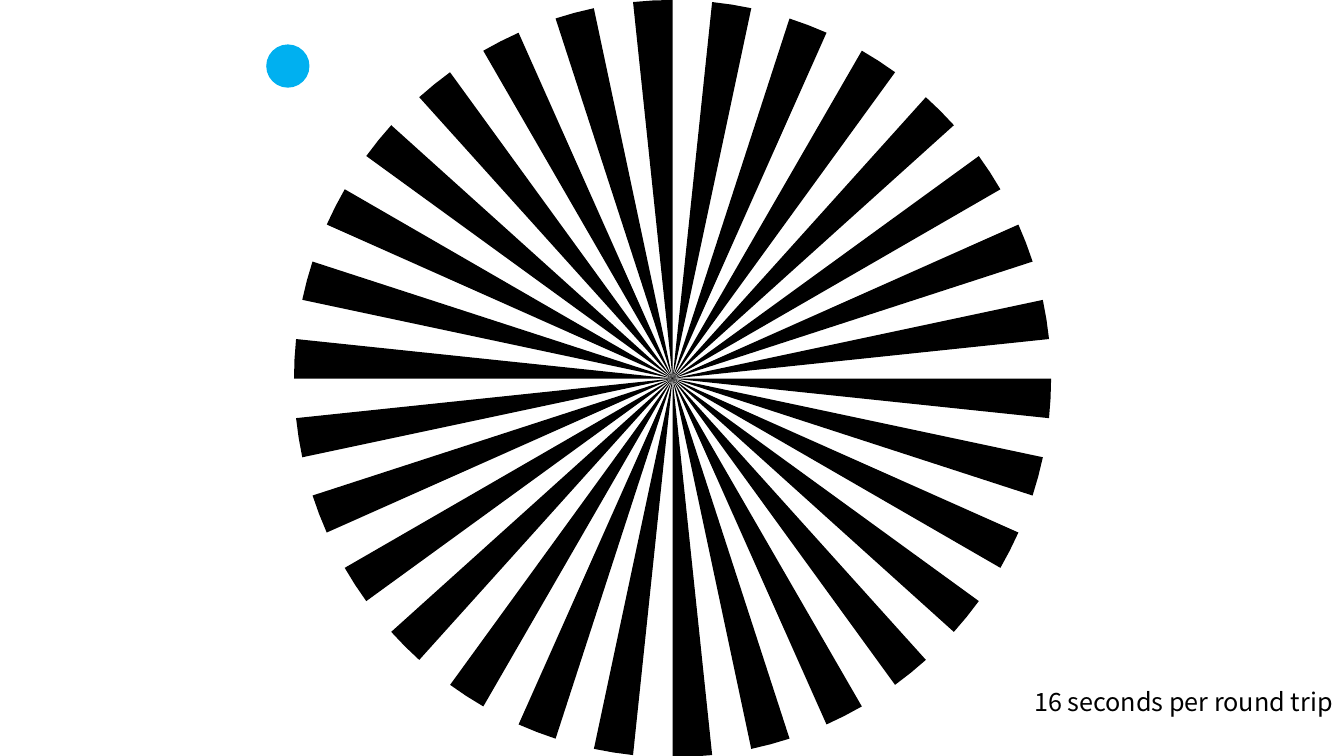
from math import cos, radians, sin

from pptx import Presentation
from pptx.dml.color import RGBColor
from pptx.enum import shapes, text
from pptx.util import Cm, Pt

# Content: lengths in cm, angles in degrees clockwise from the right
CAPTION = "16 seconds per round trip"
FONT, FONT_SIZE = "Noto Sans CJK JP", 18
CAPTION_BOX = (25.81, 17.17, 8.08, 1.02)
DOT_BOX = (6.71, 1.12, 1.09, 1.09)
BLACK, BLUE = "000000", "00B0F0"
CENTER = (16.95, 9.54)
RADIUS = 9.54
RAYS = 30
PITCH = 360 / RAYS
RAY_ANGLE = PITCH / 2


def paint(s, color):
    s.shadow.inherit = False
    s.fill.solid()
    s.fill.fore_color.rgb = RGBColor.from_string(color)
    s.line.fill.background()


def rim_point(angle):
    x, y = CENTER
    a = radians(angle)
    return Cm(x + RADIUS * cos(a)), Cm(y + RADIUS * sin(a))


prs = Presentation()
prs.slide_width, prs.slide_height = Cm(33.87), Cm(19.05)
slide = prs.slides.add_slide(prs.slide_layouts[6])

# Wheel of rays
wheel = slide.shapes.add_group_shape()
for i in range(RAYS):
    start = i * PITCH
    ray = wheel.shapes.build_freeform(Cm(CENTER[0]), Cm(CENTER[1]))
    ray.add_line_segments([rim_point(start + RAY_ANGLE * k / 2) for k in range(3)])
    paint(ray.convert_to_shape(), BLACK)

# Caption
tf = slide.shapes.add_textbox(*map(Cm, CAPTION_BOX)).text_frame
tf.word_wrap = False
tf.auto_size = text.MSO_AUTO_SIZE.SHAPE_TO_FIT_TEXT
tf.text = CAPTION
r = tf.paragraphs[0].runs[0]
r.font.name, r.font.size = FONT, Pt(FONT_SIZE)
r.font.color.rgb = RGBColor.from_string(BLACK)

# Moving dot
dot = slide.shapes.add_shape(shapes.MSO_SHAPE.OVAL, *map(Cm, DOT_BOX))
paint(dot, BLUE)

prs.save("out.pptx")
